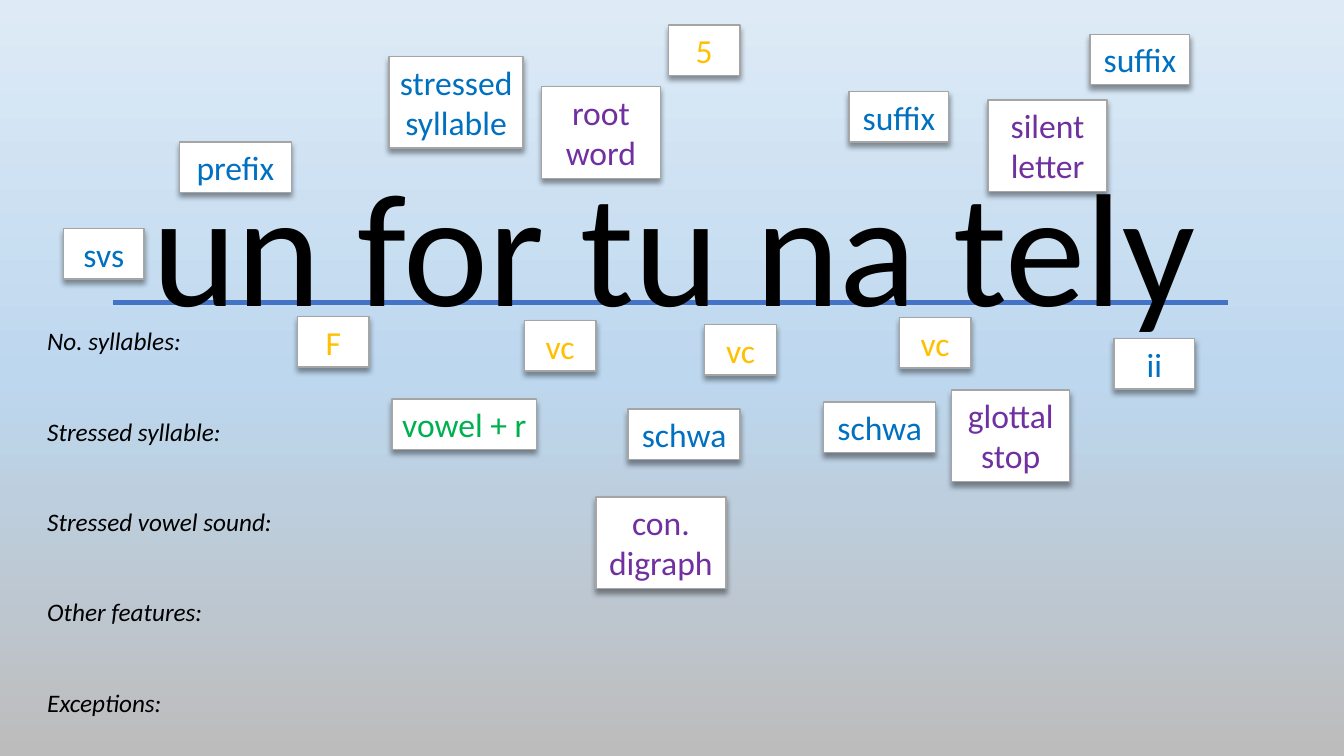
"""Build a slide that labels the spelling features of the word unfortunately."""
from copy import deepcopy

from pptx import Presentation
from pptx.dml.color import RGBColor
from pptx.enum.shapes import MSO_CONNECTOR, MSO_SHAPE
from pptx.enum.text import MSO_ANCHOR, MSO_AUTO_SIZE, PP_ALIGN
from pptx.oxml import parse_xml
from pptx.oxml.ns import nsdecls
from pptx.util import Inches, Pt

BLACK = RGBColor(0x00, 0x00, 0x00)
WHITE = RGBColor(0xFF, 0xFF, 0xFF)
GREY = RGBColor(0xA5, 0xA5, 0xA5)
RULE_BLUE = RGBColor(0x44, 0x72, 0xC4)
BLUE = RGBColor(0x00, 0x70, 0xC0)
YELLOW = RGBColor(0xFF, 0xC0, 0x00)
GREEN = RGBColor(0x00, 0xB0, 0x50)
PURPLE = RGBColor(0x70, 0x30, 0xA0)
BACKGROUND = [
    (0, RGBColor(0xDE, 0xEB, 0xF7)),
    (0.5, RGBColor(0xBD, 0xD7, 0xEE)),
    (1, RGBColor(0xBD, 0xBC, 0xBC)),
]

FONT = "Calibri"
WORD = "un for tu na tely"
QUESTIONS = [
    "No. syllables:",
    "Stressed syllable:",
    "Stressed vowel sound:",
    "Other features:",
    "Exceptions:",
]
STRESS_TAG = ("stressed\nsyllable", 3.86, 0.56, 1.33, BLUE)
TAGS = [
    ("5", 6.63, 0.25, 0.71, YELLOW),
    ("F", 2.95, 3.14, 0.71, YELLOW),
    ("vc", 5.2, 3.18, 0.71, YELLOW),
    ("suffix", 10.81, 0.34, 0.99, BLUE),
    ("schwa", 6.23, 4.06, 1.11, BLUE),
    ("schwa", 8.17, 3.99, 1.11, BLUE),
    ("vowel + r", 3.89, 3.96, 1.43, GREEN),
    ("con. digraph", 5.91, 4.93, 1.29, PURPLE),
    ("vc", 6.99, 3.22, 0.71, YELLOW),
    ("vc", 8.92, 3.15, 0.71, YELLOW),
    ("prefix", 1.78, 1.41, 1.11, BLUE),
    ("silent\nletter", 9.8, 0.99, 1.18, PURPLE),
    ("suffix", 8.42, 0.91, 0.99, BLUE),
    ("glottal\nstop", 9.44, 3.87, 1.17, PURPLE),
    ("root\nword", 5.37, 0.86, 1.18, PURPLE),
    ("svs", 0.63, 2.27, 0.8, BLUE),
    ("ii", 11.05, 3.36, 0.8, BLUE),
]
ONE_LINE, TWO_LINES = 0.5, 0.91
SHADOW = (
    f'<a:effectLst {nsdecls("a")}><a:outerShdw blurRad="{Pt(4)}" dist="{Pt(3)}" '
    'dir="5400000" algn="t" rotWithShape="0"><a:srgbClr val="000000">'
    '<a:alpha val="40000"/></a:srgbClr></a:outerShdw></a:effectLst>'
)


def paint_background(slide):
    """Fill the slide with the vertical three-stop gradient."""
    fill = slide.background.fill
    fill.gradient()
    fill.gradient_angle = 270
    stop_list = slide.element.xpath(".//a:gsLst")[0]
    stop_list.insert(1, deepcopy(stop_list[0]))
    for stop, (position, color) in zip(fill.gradient_stops, BACKGROUND):
        stop.position = position
        stop.color.rgb = color


def write(shape, text, size, color, align=PP_ALIGN.CENTER, inset=0.05, italic=None, gap=0):
    """Put formatted text in a shape, one paragraph a line."""
    frame = shape.text_frame
    frame.text = text
    frame.word_wrap = True
    frame.auto_size = MSO_AUTO_SIZE.SHAPE_TO_FIT_TEXT
    frame.margin_left = frame.margin_right = Inches(inset)
    for index, paragraph in enumerate(frame.paragraphs):
        paragraph.alignment = align
        paragraph.space_before = Pt(gap if index else 0)
        for run in paragraph.runs:
            run.font.name = FONT
            run.font.size = Pt(size)
            run.font.italic = italic
            run.font.color.rgb = color


def add_tag(slide, text, left, top, width, color):
    """Add a white shadowed card with a coloured caption."""
    height = TWO_LINES if "\n" in text or text.startswith("con.") else ONE_LINE
    tag = slide.shapes.add_shape(
        MSO_SHAPE.RECTANGLE, Inches(left), Inches(top), Inches(width), Inches(height)
    )
    tag.fill.solid()
    tag.fill.fore_color.rgb = WHITE
    tag.line.color.rgb = GREY
    tag.line.width = Pt(1)
    tag.element.spPr.append(parse_xml(SHADOW))
    write(tag, text, 24, color)
    tag.text_frame.vertical_anchor = MSO_ANCHOR.TOP


def add_baseline(slide):
    """Add the blue line under the word."""
    line = slide.shapes.add_connector(
        MSO_CONNECTOR.STRAIGHT, Inches(1.12), Inches(3), Inches(12.18), Inches(3)
    )
    line.line.color.rgb = RULE_BLUE
    line.line.width = Pt(3)
    line.element.spPr.append(parse_xml(f'<a:effectLst {nsdecls("a")}/>'))


presentation = Presentation()
presentation.slide_width, presentation.slide_height = Inches(13.33), Inches(7.5)
slide = presentation.slides.add_slide(presentation.slide_layouts[6])
paint_background(slide)

add_tag(slide, *STRESS_TAG)
add_baseline(slide)
word = slide.shapes.add_textbox(Inches(1.41), Inches(1.39), Inches(10.55), Inches(2.04))
write(word, WORD, 115, BLACK)
for tag in TAGS:
    add_tag(slide, *tag)
questions = slide.shapes.add_textbox(Inches(0.37), Inches(3.18), Inches(2.45), Inches(4.04))
write(questions, "\n".join(QUESTIONS), 18, BLACK, PP_ALIGN.LEFT, 0.1, True, 43)

presentation.save("out.pptx")
